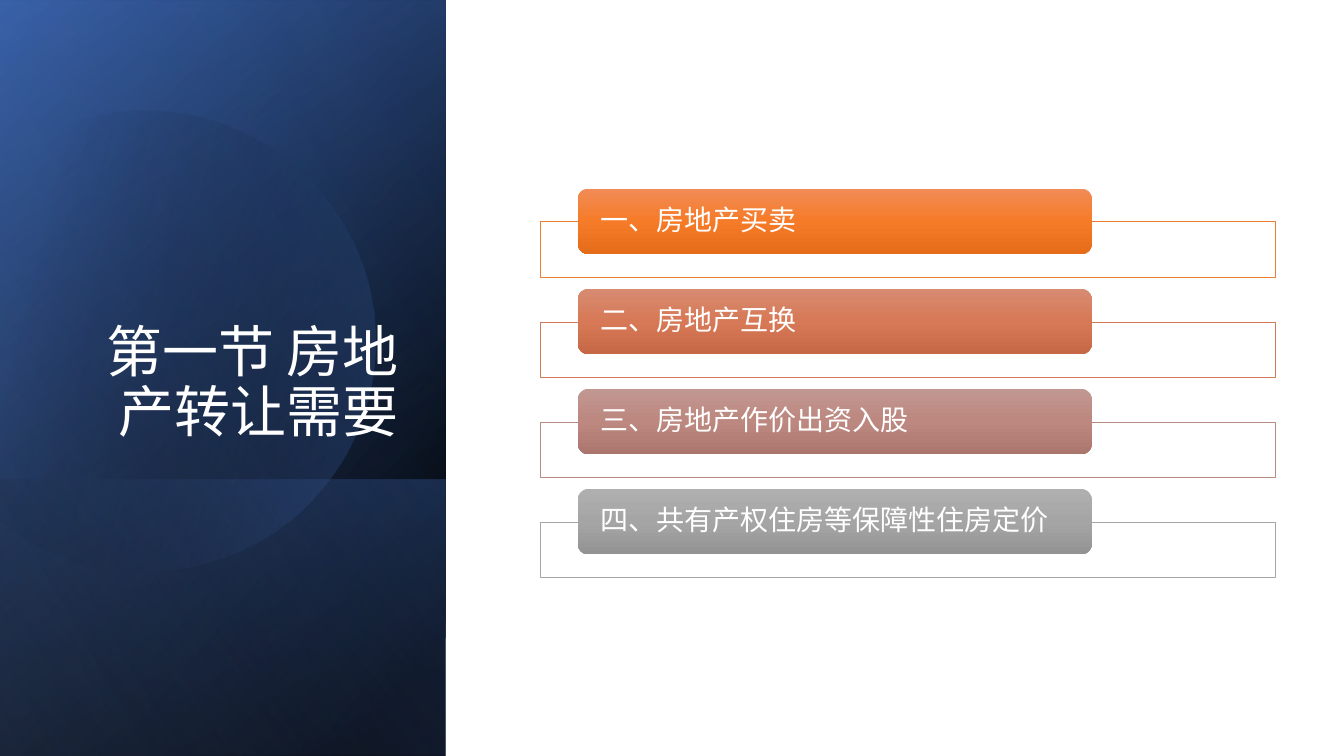
import math

import pptx
import pptx.util
import pptx.dml.color
import pptx.enum.shapes
import pptx.enum.text
import pptx.oxml
import pptx.oxml.ns

Inches = pptx.util.Inches
Pt = pptx.util.Pt
RGBColor = pptx.dml.color.RGBColor
Shapes = pptx.enum.shapes.MSO_SHAPE
Align = pptx.enum.text.PP_ALIGN
Anchor = pptx.enum.text.MSO_ANCHOR
qn = pptx.oxml.ns.qn

FONT = "Noto Sans CJK SC"
DRAWING = pptx.oxml.ns.nsdecls("a")
WHITE = RGBColor(0xFF, 0xFF, 0xFF)
BLACK = RGBColor(0x00, 0x00, 0x00)
NAVY = RGBColor(0x2F, 0x55, 0x97)
BLUE = RGBColor(0x44, 0x72, 0xC4)
PALE_BLUE = RGBColor(0x8F, 0xAA, 0xDC)
ORANGE = RGBColor(0xED, 0x7D, 0x31)
ORANGE_TOP = RGBColor(0xF1, 0x8C, 0x57)
ORANGE_MID = RGBColor(0xF6, 0x7B, 0x28)
ORANGE_LOW = RGBColor(0xE5, 0x6C, 0x19)
CORAL = RGBColor(0xD1, 0x7B, 0x5C)
CORAL_TOP = RGBColor(0xD7, 0x8B, 0x72)
CORAL_MID = RGBColor(0xD7, 0x79, 0x56)
CORAL_LOW = RGBColor(0xC6, 0x68, 0x46)
ROSE = RGBColor(0xB9, 0x8A, 0x82)
ROSE_TOP = RGBColor(0xC1, 0x97, 0x91)
ROSE_MID = RGBColor(0xBC, 0x88, 0x80)
ROSE_LOW = RGBColor(0xAA, 0x76, 0x6E)
GRAY = RGBColor(0xA5, 0xA5, 0xA5)
GRAY_TOP = RGBColor(0xAF, 0xAF, 0xAF)
GRAY_LOW = RGBColor(0x93, 0x93, 0x93)

PANEL = (-1.54, 1.54, 7.5, 4.42)
PANEL_TINT = (-1.54, 1.55, 7.5, 4.42)
PANEL_FOOT = (0.84, 3.92, 2.74, 4.42)
FIRST_ROW = 1.87
ROW_STEP = 2.98 / 3
TOPICS = [
    ("一、房地产买卖", ORANGE, (ORANGE_TOP, ORANGE_MID, ORANGE_LOW)),
    ("二、房地产互换", CORAL, (CORAL_TOP, CORAL_MID, CORAL_LOW)),
    ("三、房地产作价出资入股", ROSE, (ROSE_TOP, ROSE_MID, ROSE_LOW)),
    ("四、共有产权住房等保障性住房定价", GRAY, (GRAY_TOP, GRAY, GRAY_LOW)),
]


def write_text(shape, text, size=20, align=Align.LEFT, anchor=Anchor.MIDDLE,
               side=0.1, edge=0.05, after=0):
    """Fill a shape with one formatted paragraph."""
    frame = shape.text_frame
    frame.word_wrap = True
    frame.vertical_anchor = anchor
    frame.margin_left = frame.margin_right = Inches(side)
    frame.margin_top = frame.margin_bottom = Inches(edge)
    paragraph = frame.paragraphs[0]
    paragraph.alignment = align
    paragraph.line_spacing = 0.9
    paragraph.space_after = Pt(after)
    run = paragraph.add_run()
    run.text = text
    run.font.size = Pt(size)
    run.font.name = FONT
    run.font.color.rgb = WHITE
    latin = next(shape.element.iter(qn("a:latin")))
    latin.addnext(pptx.oxml.parse_xml(f'<a:ea {DRAWING} typeface="{FONT}"/>'))


class TopicSlide:
    """Holds the slide and draws its panels, frames, buttons and title."""

    def __init__(self, deck):
        self.slide = deck.slides.add_slide(deck.slide_layouts[6])

    def shape(self, kind, box):
        """Add a plain preset shape."""
        added = self.slide.shapes.add_shape(kind, *map(Inches, box))
        added.shadow.inherit = False
        added.line.fill.background()
        return added

    def gradient(self, shape, stops, angle):
        """Fill a shape with (position, colour, opacity) stops."""
        marks = "".join(
            f'<a:gs pos="{place * 1000}"><a:srgbClr val="{color}">'
            f'<a:alpha val="{opacity * 1000}"/></a:srgbClr></a:gs>'
            for place, color, opacity in stops)
        shape.fill.background()
        properties = shape.element.spPr
        properties.replace(
            properties.find(qn("a:noFill")),
            pptx.oxml.parse_xml(
                f'<a:gradFill {DRAWING} rotWithShape="1">'
                f'<a:gsLst>{marks}</a:gsLst>'
                f'<a:lin ang="{angle * 60000}" scaled="0"/></a:gradFill>'))

    def panel(self, box, stops, angle):
        """Add a mirrored, quarter-turned gradient panel."""
        panel = self.shape(Shapes.RECTANGLE, box)
        panel.rotation = 90
        panel.element.spPr.find(qn("a:xfrm")).set("flipH", "1")
        self.gradient(panel, stops, angle)

    def disc(self, box, start, sweep, stops, angle):
        """Add a tilted disc, flush with the right of its box, cut by a chord."""
        left, top, width, height = map(Inches, box)
        builder = self.slide.shapes.build_freeform(left, top)
        builder.add_line_segments([(left + width, top), (left + width, top + height),
                                   (left, top + height)], close=True)
        disc = builder.convert_to_shape()
        radius = height // 2
        start_x = round(width - radius + radius * math.cos(math.radians(start)))
        start_y = round(radius + radius * math.sin(math.radians(start)))
        outline = next(disc.element.iter(qn("a:path")))
        outline.getparent().replace(outline, pptx.oxml.parse_xml(
            f'<a:path {DRAWING} w="{width}" h="{height}">'
            f'<a:moveTo><a:pt x="{start_x}" y="{start_y}"/></a:moveTo>'
            f'<a:arcTo wR="{radius}" hR="{radius}" stAng="{start * 60000}" '
            f'swAng="{sweep * 60000}"/><a:close/></a:path>'))
        disc.shadow.inherit = False
        disc.line.fill.background()
        disc.rotation = 343.9
        self.gradient(disc, stops, angle)

    def title(self, text, box):
        """Add the section title."""
        heading = self.slide.shapes.add_textbox(*map(Inches, box))
        write_text(heading, text, size=40, align=Align.RIGHT, anchor=Anchor.BOTTOM)

    def topic(self, text, top, outline, shades):
        """Add an outlined frame with its button on top."""
        frame = self.shape(Shapes.RECTANGLE, (5.36, top + 0.33, 7.29, 0.55))
        frame.fill.solid()
        frame.fill.fore_color.rgb = WHITE
        frame.line.color.rgb = outline
        frame.line.width = Pt(0.5)
        button = self.shape(Shapes.ROUNDED_RECTANGLE, (5.73, top, 5.1, 0.65))
        self.gradient(button, [(place, shade, 100) for place, shade
                               in zip((0, 50, 100), shades)], 90)
        write_text(button, text, side=0.19, edge=0, after=7)


def main():
    """Build and save the slide."""
    deck = pptx.Presentation()
    deck.slide_width, deck.slide_height = Inches(13.33), Inches(7.5)
    page = TopicSlide(deck)
    page.panel(PANEL, [(8, BLACK, 100), (100, NAVY, 100)], 50)
    page.panel(PANEL_TINT, [(0, BLACK, 0), (99, BLUE, 46)], 30)
    page.panel(PANEL_FOOT, [(2, BLUE, 29), (100, BLACK, 30)], 130)
    page.disc((-0.55, 1.06, 4.27, 4.57), 242, 268, [(29, BLACK, 0), (100, BLUE, 43)], 30)
    page.panel(PANEL, [(0, BLACK, 0), (99, PALE_BLUE, 11)], 120)
    page.title("第一节 房地产转让需要", (0.64, 1.84, 3.41, 2.62))
    for row, (text, outline, shades) in enumerate(TOPICS):
        page.topic(text, FIRST_ROW + row * ROW_STEP, outline, shades)
    deck.save("out.pptx")


if __name__ == "__main__":
    main()
